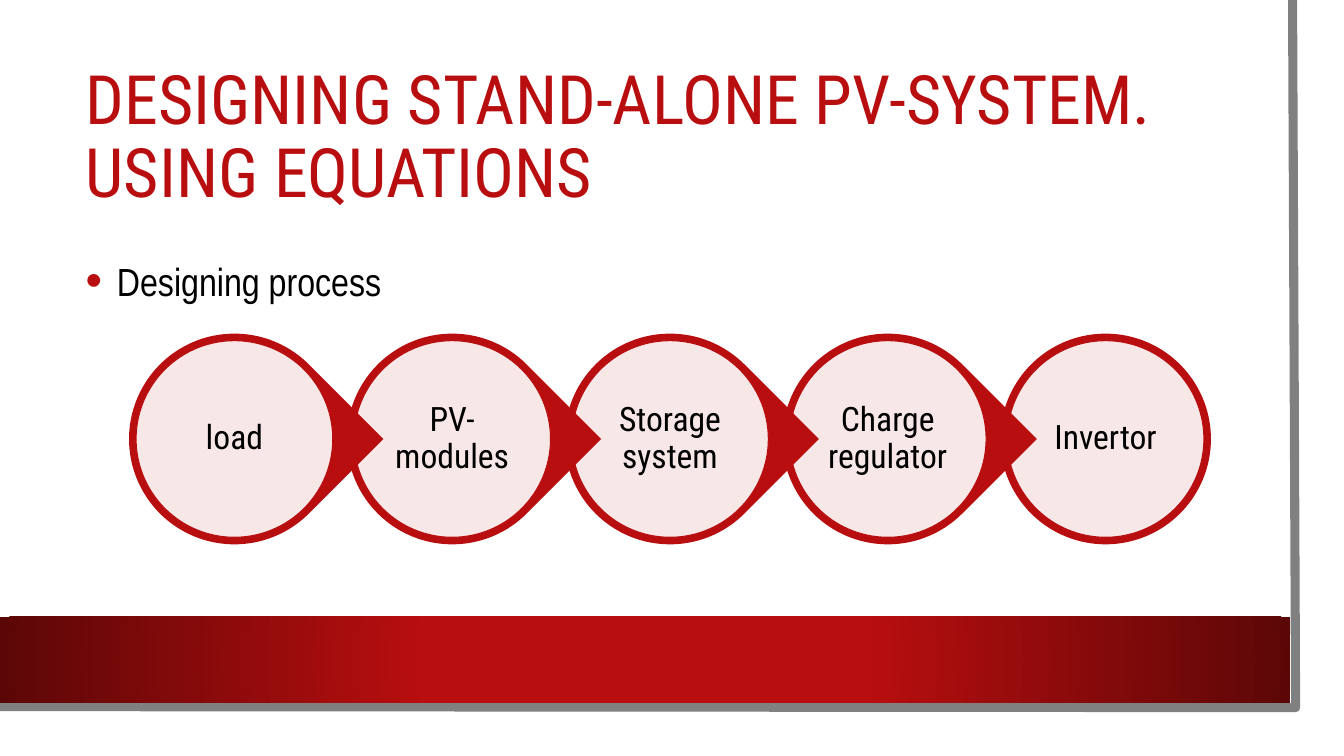
from dataclasses import dataclass

from lxml.etree import SubElement
from pptx import Presentation
from pptx.dml.color import RGBColor
from pptx.enum.shapes import MSO_SHAPE
from pptx.enum.text import MSO_ANCHOR, MSO_AUTO_SIZE, PP_ALIGN
from pptx.oxml import parse_xml
from pptx.oxml.ns import nsdecls, qn
from pptx.shapes.autoshape import Shape
from pptx.slide import Slide
from pptx.text.text import _Paragraph
from pptx.util import Inches, Pt


@dataclass(frozen=True)
class Theme:
    red: str = "B80E0F"
    dark_red: str = "5C0707"
    grey: str = "808080"
    white: str = "FFFFFF"
    black: str = "000000"
    title_font: str = "Roboto Condensed"
    body_font: str = "Arial Narrow"
    title_size: float = 48.6
    body_size: float = 28
    step_size: float = 24


@dataclass(frozen=True)
class Box:
    left: float
    top: float
    width: float
    height: float

    def inset(self, gap: float) -> "Box":
        return Box(self.left + gap, self.top + gap, self.width - 2 * gap, self.height - 2 * gap)


@dataclass(frozen=True)
class Step:
    label: str
    shape: MSO_SHAPE = MSO_SHAPE.TEAR
    rotation: float = 45


THEME = Theme()
STEPS = [
    Step("load"),
    Step("PV-modules"),
    Step("Storage system"),
    Step("Charge regulator"),
    Step("Invertor", MSO_SHAPE.OVAL, 0),
]
FIRST_STEP = Box(1.28, 3.31, 2.09, 2.09)
STEP_PITCH = 2.16
RING = 0.07


def rgb(color: str) -> RGBColor:
    return RGBColor.from_string(color)


def place(sp: Shape, box: Box) -> None:
    sp.left, sp.top = Inches(box.left), Inches(box.top)
    sp.width, sp.height = Inches(box.width), Inches(box.height)


def add_filled(s: Slide, kind: MSO_SHAPE, box: Box, color: str) -> Shape:
    sp = s.shapes.add_shape(kind, 0, 0, 0, 0)
    place(sp, box)
    sp.shadow.inherit = False
    sp.fill.solid()
    sp.fill.fore_color.rgb = rgb(color)
    sp.line.fill.background()
    return sp


def style(p: _Paragraph, font: str, size: float, color: str) -> None:
    for r in p.runs:
        r.font.name, r.font.size = font, Pt(size)
        r.font.color.rgb = rgb(color)


def add_frame(s: Slide) -> None:
    add_filled(s, MSO_SHAPE.RECTANGLE, Box(0, 0, 13.1, 7.27), THEME.white)
    builder = s.shapes.build_freeform(Inches(12.82), 0)
    corners = [(12.85, 7.02), (-0.03, 7.01)]
    builder.add_line_segments([(Inches(x), Inches(y)) for x, y in corners], close=False)
    edge = builder.convert_to_shape()
    edge.shadow.inherit = False
    edge.fill.background()
    edge.line.color.rgb = rgb(THEME.grey)
    edge.line.width = Pt(6.5)

    band = add_filled(s, MSO_SHAPE.RECTANGLE, Box(0, 6.12, 12.8, 0.85), THEME.red)
    solid = band._element.spPr.find(qn("a:solidFill"))
    gradient = parse_xml(
        f'<a:gradFill {nsdecls("a")} rotWithShape="1"><a:gsLst>'
        f'<a:gs pos="34000"><a:srgbClr val="{THEME.red}"/></a:gs>'
        f'<a:gs pos="100000"><a:srgbClr val="{THEME.dark_red}"/></a:gs></a:gsLst>'
        '<a:path path="circle"><a:fillToRect l="50000" t="50000" r="50000" b="50000"/></a:path>'
        "</a:gradFill>"
    )
    solid.getparent().replace(solid, gradient)


def fill_title(s: Slide, text: str) -> None:
    sp = s.shapes.title
    place(sp, Box(0.75, 0.75, 11.37, 1.26))
    tf = sp.text_frame
    tf.text = text
    tf.auto_size = MSO_AUTO_SIZE.NONE
    tf.vertical_anchor = MSO_ANCHOR.MIDDLE
    p = tf.paragraphs[0]
    p.alignment, p.line_spacing = PP_ALIGN.LEFT, 0.9
    style(p, THEME.title_font, THEME.title_size, THEME.red)


def fill_body(s: Slide, text: str) -> None:
    sp = s.placeholders[1]
    place(sp, Box(0.75, 2.5, 3.87, 0.57))
    tf = sp.text_frame
    tf.text = text
    tf.auto_size = MSO_AUTO_SIZE.NONE
    p = tf.paragraphs[0]
    p.space_before = Pt(0)
    pPr = p._p.get_or_add_pPr()
    pPr.set("marL", str(Inches(0.31)))
    pPr.set("indent", str(-Inches(0.31)))
    SubElement(SubElement(pPr, qn("a:buClr")), qn("a:srgbClr"), val=THEME.red)
    SubElement(pPr, qn("a:buSzPct"), val="120000")
    SubElement(pPr, qn("a:buFont"), typeface="Arial")
    SubElement(pPr, qn("a:buChar"), char="•")
    style(p, THEME.body_font, THEME.body_size, THEME.black)


def add_step(s: Slide, step: Step, box: Box) -> None:
    add_filled(s, step.shape, box, THEME.red).rotation = step.rotation
    disc = add_filled(s, MSO_SHAPE.OVAL, box.inset(RING), THEME.white)
    color = disc._element.spPr.find(qn("a:solidFill")).find(qn("a:srgbClr"))
    SubElement(color, qn("a:alpha"), val="90000")
    disc.line.color.rgb = rgb(THEME.red)
    disc.line.width = Pt(0.75)
    tf = disc.text_frame
    tf.text = step.label
    tf.word_wrap = True
    tf.vertical_anchor = MSO_ANCHOR.MIDDLE
    tf.margin_left = tf.margin_right = tf.margin_top = tf.margin_bottom = Inches(0.03)
    p = tf.paragraphs[0]
    p.alignment, p.line_spacing = PP_ALIGN.CENTER, 0.9
    style(p, THEME.title_font, THEME.step_size, THEME.black)


def main() -> None:
    """Build the slide on the stand-alone PV-system design process."""
    prs = Presentation()
    prs.slide_width, prs.slide_height = Inches(13.33), Inches(7.5)
    s = prs.slides.add_slide(prs.slide_layouts[1])
    add_frame(s)
    for sp in list(s.placeholders):
        s.shapes._spTree.append(sp._element)
    fill_title(s, "DESIGNING STAND-ALONE PV-SYSTEM.\vUSING EQUATIONS")
    fill_body(s, "Designing process")
    first = FIRST_STEP
    for i, step in reversed(list(enumerate(STEPS))):
        left = first.left + i * STEP_PITCH
        add_step(s, step, Box(left, first.top, first.width, first.height))
    prs.save("out.pptx")


if __name__ == "__main__":
    main()
